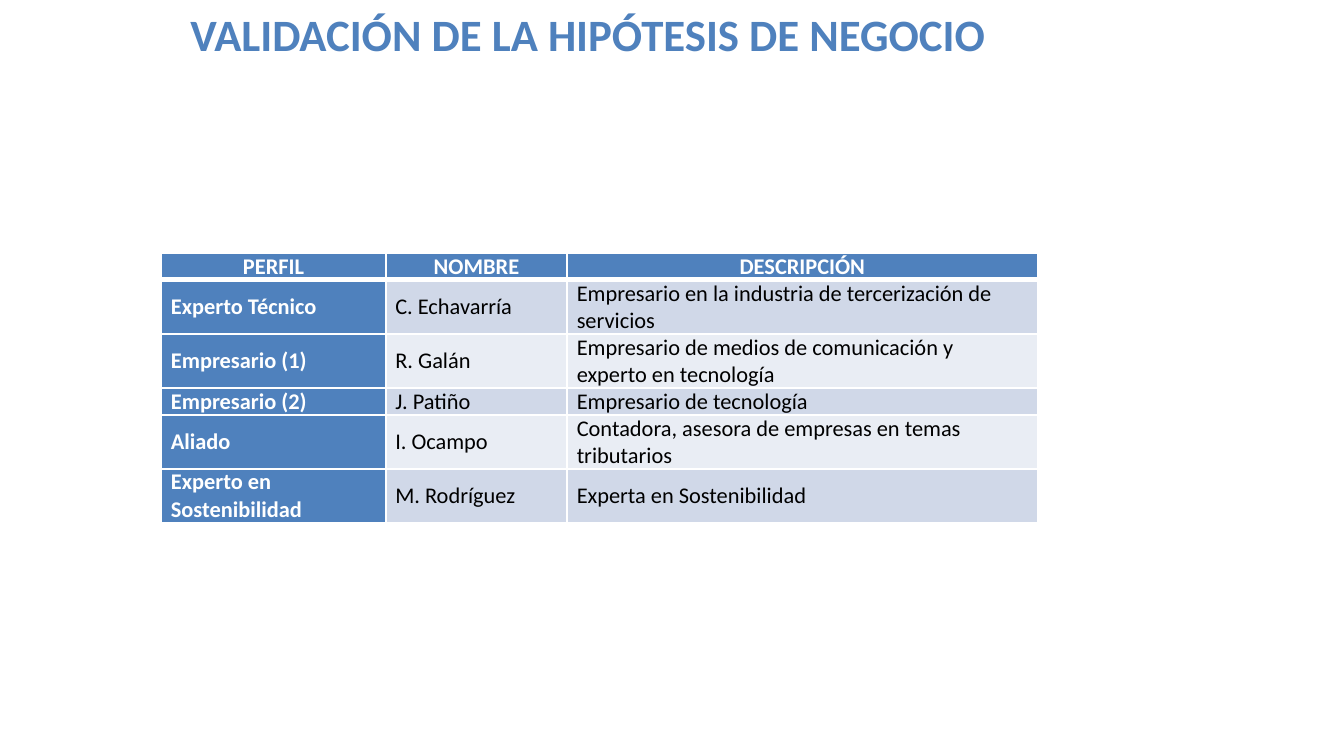
from lxml import etree
from pptx import Presentation
from pptx.dml.color import RGBColor
from pptx.enum.text import MSO_ANCHOR, PP_ALIGN
from pptx.oxml.ns import qn
from pptx.util import Cm, Pt

CENTER, LEFT = PP_ALIGN.CENTER, PP_ALIGN.LEFT
TOP, MIDDLE = MSO_ANCHOR.TOP, MSO_ANCHOR.MIDDLE

BLUE = RGBColor(0x4F, 0x81, 0xBD)
BAND_DARK = RGBColor(0xD0, 0xD8, 0xE8)
BAND_LIGHT = RGBColor(0xE9, 0xED, 0xF4)
WHITE = RGBColor(0xFF, 0xFF, 0xFF)
BLACK = RGBColor(0, 0, 0)
FONT = "Calibri"

TITLE = "VALIDACIÓN DE LA HIPÓTESIS DE NEGOCIO"
HEADINGS = ("PERFIL", "NOMBRE", "DESCRIPCIÓN")
PROFILES = [
    ("Experto Técnico", "C. Echavarría",
     "Empresario en la industria de tercerización de servicios"),
    ("Empresario (1)", "R. Galán",
     "Empresario de medios de comunicación y experto en tecnología"),
    ("Empresario (2)", "J. Patiño", "Empresario de tecnología"),
    ("Aliado", "I. Ocampo",
     "Contadora, asesora de empresas en temas tributarios"),
    ("Experto en Sostenibilidad", "M. Rodríguez",
     "Experta en Sostenibilidad"),
]
COLUMN_WIDTHS = (4.24, 3.43, 8.89)
LINE_HEIGHT = 0.51
LINES_PER_ROW = (1, 2, 2, 1, 2, 2)


def write_text(frame, text, size, color, bold, align):
    paragraph = frame.paragraphs[0]
    paragraph.alignment = align
    run = paragraph.add_run()
    run.text = text
    run.font.name = FONT
    run.font.size = Pt(size)
    run.font.bold = bold
    run.font.color.rgb = color


def add_title(slide, left, top, width, height):
    title = slide.shapes.add_textbox(Cm(left), Cm(top), Cm(width), Cm(height))
    title.text_frame.word_wrap = True
    write_text(title.text_frame, TITLE, 24, BLUE, True, CENTER)


def set_borders(cell, bottom_width):
    """Draw white cell edges; they must precede the fill in the cell XML."""
    properties = cell._tc.get_or_add_tcPr()
    widths = {"a:lnL": 1, "a:lnR": 1, "a:lnT": 1, "a:lnB": bottom_width}
    for position, (edge, width) in enumerate(widths.items()):
        line = etree.Element(qn(edge), w=str(Pt(width)))
        fill = etree.SubElement(line, qn("a:solidFill"))
        etree.SubElement(fill, qn("a:srgbClr"), val=str(WHITE))
        properties.insert(position, line)


def format_cell(cell, text, row, column):
    is_header = row == 0
    is_strong = is_header or column == 0
    band = BAND_DARK if row % 2 else BAND_LIGHT
    cell.margin_left = cell.margin_right = Cm(0.18)
    cell.margin_top = cell.margin_bottom = 0
    cell.vertical_anchor = TOP if is_header else MIDDLE
    cell.fill.solid()
    cell.fill.fore_color.rgb = BLUE if is_strong else band
    # The heading rule is shared with the top edge of the first profile row.
    set_borders(cell, 3 if is_header else 1)
    write_text(cell.text_frame, text, 12, WHITE if is_strong else BLACK,
               is_strong, CENTER if is_header else LEFT)


def add_profile_table(slide, left, top, width, height):
    rows = [HEADINGS, *PROFILES]
    table = slide.shapes.add_table(len(rows), len(HEADINGS), Cm(left), Cm(top),
                                   Cm(width), Cm(height)).table
    for column, column_width in zip(table.columns, COLUMN_WIDTHS):
        column.width = Cm(column_width)
    for row, lines in zip(table.rows, LINES_PER_ROW):
        row.height = Cm(lines * LINE_HEIGHT)
    for row_index, texts in enumerate(rows):
        for column_index, text in enumerate(texts):
            format_cell(table.cell(row_index, column_index), text,
                        row_index, column_index)


def main():
    presentation = Presentation()
    presentation.slide_width = Cm(25.4)
    presentation.slide_height = Cm(14.29)
    slide = presentation.slides.add_slide(presentation.slide_layouts[6])
    add_title(slide, 0.71, 0, 20.8, 1.27)
    add_profile_table(slide, 3.05, 4.78, sum(COLUMN_WIDTHS),
                      sum(LINES_PER_ROW) * LINE_HEIGHT)
    presentation.save("out.pptx")


if __name__ == "__main__":
    main()
